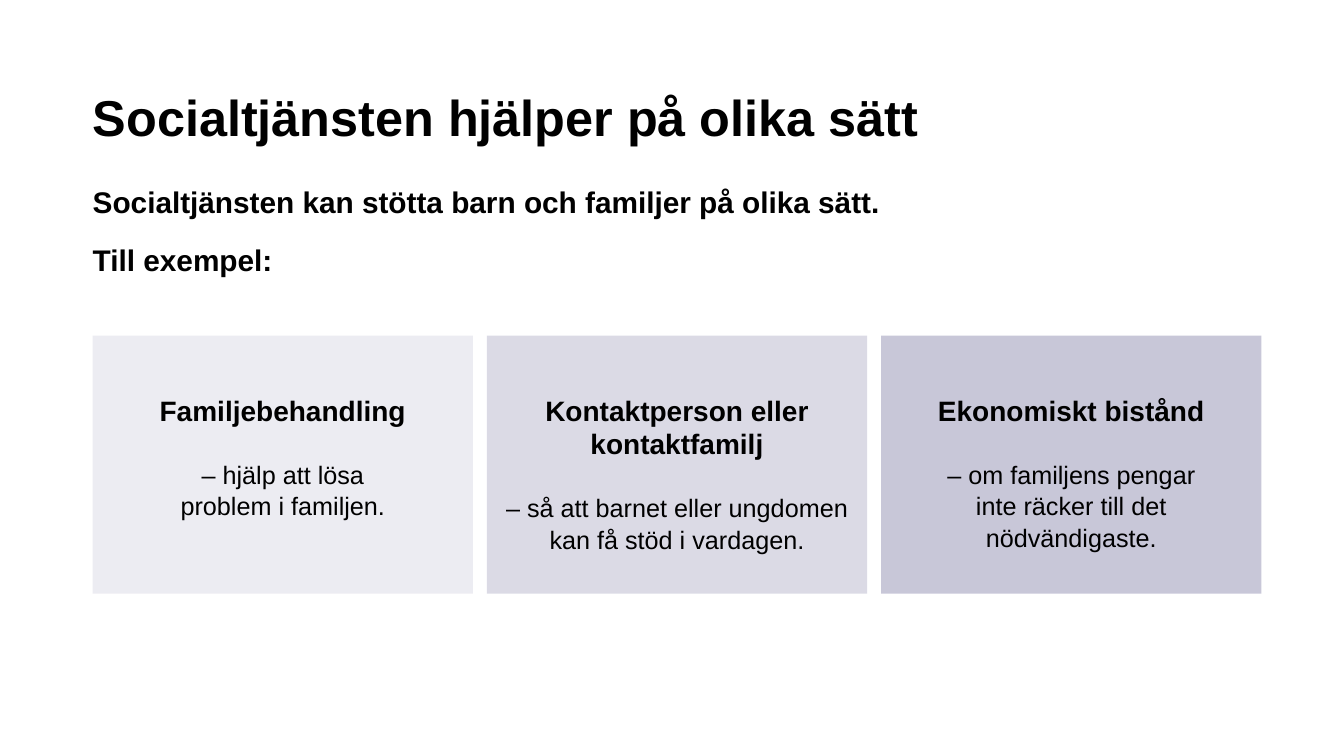
from lxml import etree
from pptx import Presentation
from pptx import util as u
from pptx.dml.color import RGBColor
from pptx.enum import shapes, text
from pptx.oxml import ns

# Content
TITLE = "Socialtjänsten hjälper på olika sätt"
INTRO = ["Socialtjänsten kan stötta barn och familjer på olika sätt.", "Till exempel:"]
# Heading, description, fill opacity in percent; \v is a line break
CARDS = [
    ("Familjebehandling", "– hjälp att lösa\vproblem i familjen.", 10),
    ("Kontaktperson eller kontaktfamilj",
     "– så att barnet eller ungdomen kan få stöd i vardagen.", 20),
    ("Ekonomiskt bistånd",
     "– om familjens pengar\vinte räcker till det\vnödvändigaste.", 30),
]

# Style and layout, in inches
FONT = "Arial"
BLACK = RGBColor(0x00, 0x00, 0x00)
PURPLE = RGBColor(0x4C, 0x47, 0x81)
LEFT, WIDTH = 0.92, 11.5
CARD_TOP, CARD_WIDTH, CARD_HEIGHT, CARD_STEP = 3.33, 3.77, 2.56, 3.91
TEXT_TOP, TEXT_HEIGHT, TEXT_INSET = 3.76, 1.79, 0.14


def add_text(frame, words, size, bold=True, align=text.PP_ALIGN.LEFT,
             spacing=1.0, before=0):
    """Append one formatted paragraph to a text frame."""
    para = frame.paragraphs[0] if not frame.text else frame.add_paragraph()
    para.text = words
    para.alignment = align
    para.line_spacing = spacing
    para.space_before = u.Pt(before)
    para.font.name = FONT
    para.font.size = u.Pt(size)
    para.font.bold = bold
    para.font.color.rgb = BLACK


def add_box(page, left, top, width, height, anchor=text.MSO_ANCHOR.TOP, inset=0):
    box = page.shapes.add_textbox(*map(u.Inches, (left, top, width, height)))
    frame = box.text_frame
    frame.word_wrap = True
    frame.vertical_anchor = anchor
    frame.margin_left = frame.margin_right = frame.margin_bottom = 0
    frame.margin_top = u.Inches(inset)
    return frame


def add_panel(page, left, opacity):
    panel = page.shapes.add_shape(
        shapes.MSO_SHAPE.RECTANGLE,
        *map(u.Inches, (left, CARD_TOP, CARD_WIDTH, CARD_HEIGHT)))
    panel.shadow.inherit = False
    panel.line.fill.background()
    panel.fill.solid()
    panel.fill.fore_color.rgb = PURPLE
    color = panel.fill._xPr.find(ns.qn("a:solidFill"))[0]
    etree.SubElement(color, ns.qn("a:alpha"), val=str(opacity * 1000))


def main():
    deck = Presentation()
    deck.slide_width, deck.slide_height = u.Inches(13.33), u.Inches(7.5)
    page = deck.slides.add_slide(deck.slide_layouts[6])

    # Title and introduction
    title = add_box(page, LEFT, 0.85, WIDTH, 0.6, anchor=text.MSO_ANCHOR.BOTTOM)
    add_text(title, TITLE, 36)
    intro = add_box(page, LEFT, 1.89, WIDTH, 0.89)
    for index, line in enumerate(INTRO):
        add_text(intro, line, 21.3, spacing=0.8, before=21 if index else 0)

    # Cards
    for index, (heading, description, opacity) in enumerate(CARDS):
        left = LEFT + index * CARD_STEP
        add_panel(page, left, opacity)
        card = add_box(page, left, TEXT_TOP, CARD_WIDTH, TEXT_HEIGHT, inset=TEXT_INSET)
        add_text(card, heading, 20, align=text.PP_ALIGN.CENTER)
        add_text(card, description, 18, bold=False, align=text.PP_ALIGN.CENTER,
                 spacing=1.05, before=22)

    deck.save("out.pptx")


if __name__ == "__main__":
    main()
